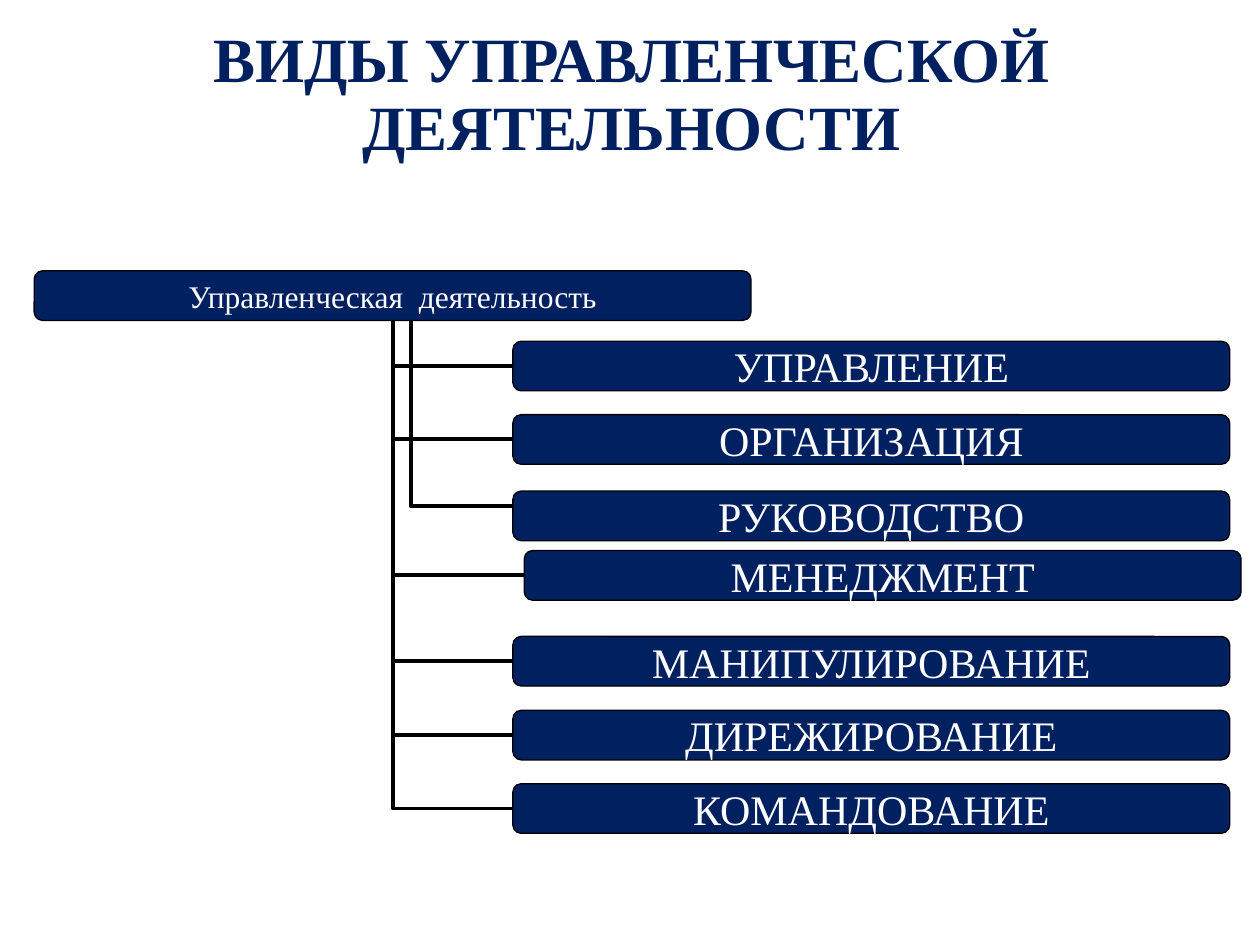
import pptx
import pptx.dml.color
import pptx.enum.shapes
import pptx.enum.text
import pptx.oxml.ns
import pptx.util
import lxml.etree

Cm = pptx.util.Cm
Pt = pptx.util.Pt
NAVY = pptx.dml.color.RGBColor(0x00, 0x20, 0x60)
BLACK = pptx.dml.color.RGBColor(0x00, 0x00, 0x00)
WHITE = pptx.dml.color.RGBColor(0xFF, 0xFF, 0xFF)

BOX_WIDTH, BOX_HEIGHT = 14.45, 1
BRANCH_LEFT = 10.34
ACTIVITIES = [
    ("УПРАВЛЕНИЕ", BRANCH_LEFT, 6.88),
    ("ОРГАНИЗАЦИЯ", BRANCH_LEFT, 8.36),
    ("РУКОВОДСТВО", BRANCH_LEFT, 9.9),
    ("МЕНЕДЖМЕНТ", 10.57, 11.1),
    ("МАНИПУЛИРОВАНИЕ", BRANCH_LEFT, 12.83),
    ("ДИРЕЖИРОВАНИЕ", BRANCH_LEFT, 14.32),
    ("КОМАНДОВАНИЕ", BRANCH_LEFT, 15.8),
]
SEPARATE_BRANCH = "РУКОВОДСТВО"


class SlideBuilder:
    font_name = "Times New Roman"

    def __init__(self, slide):
        self.slide = slide

    def apply(self, target, values):
        for name, value in values.items():
            setattr(target, name, value)

    def label(self, shape, text, size, color, bold=False, line_spacing=None, **frame_format):
        frame = shape.text_frame
        frame.text = text
        self.apply(frame, {
            "vertical_anchor": pptx.enum.text.MSO_ANCHOR.MIDDLE,
            "auto_size": pptx.enum.text.MSO_AUTO_SIZE.NONE,
            **frame_format,
        })
        paragraph = frame.paragraphs[0]
        self.apply(paragraph, {
            "alignment": pptx.enum.text.PP_ALIGN.CENTER,
            "line_spacing": line_spacing,
        })
        font = paragraph.runs[0].font
        self.apply(font, {"name": self.font_name, "size": Pt(size), "bold": bold})
        font.color.rgb = color

    def title(self, text, left, top, width, height):
        shape = self.slide.shapes.title
        self.apply(shape, {
            "left": Cm(left), "top": Cm(top), "width": Cm(width), "height": Cm(height),
        })
        self.label(shape, text, 36, NAVY, bold=True, line_spacing=0.9, word_wrap=True)

    def box(self, text, left, top, size):
        shape = self.slide.shapes.add_shape(
            pptx.enum.shapes.MSO_SHAPE.ROUNDED_RECTANGLE,
            Cm(left), Cm(top), Cm(BOX_WIDTH), Cm(BOX_HEIGHT),
        )
        shape.shadow.inherit = False
        shape.fill.solid()
        shape.fill.fore_color.rgb = NAVY
        shape.line.color.rgb = BLACK
        shape.line.width = Pt(0.75)
        margins = {f"margin_{side}": 0 for side in ("left", "top", "right", "bottom")}
        self.label(shape, text, size, WHITE, word_wrap=False, **margins)
        return shape

    def elbow(self, begin_x, begin_y, end_x, end_y):
        connector = self.slide.shapes.add_connector(
            pptx.enum.shapes.MSO_CONNECTOR.ELBOW, begin_x, begin_y, end_x, end_y
        )
        connector.line.color.rgb = BLACK
        connector.line.width = Pt(2.25)
        properties = connector._element.spPr
        properties.find(pptx.oxml.ns.qn("a:prstGeom")).set("prst", "bentConnector2")
        lxml.etree.SubElement(properties, pptx.oxml.ns.qn("a:effectLst"))
        return connector

    def branch(self, child, parent):
        connector = self.elbow(
            child.left, child.top + child.height // 2,
            parent.left + parent.width // 2, parent.top + parent.height,
        )
        connector.begin_connect(child, 1)
        connector.end_connect(parent, 2)


def main():
    presentation = pptx.Presentation()
    presentation.slide_width = Cm(25.4)
    presentation.slide_height = Cm(19.05)
    builder = SlideBuilder(presentation.slides.add_slide(presentation.slide_layouts[5]))

    builder.title("ВИДЫ УПРАВЛЕНЧЕСКОЙ ДЕЯТЕЛЬНОСТИ", 0.69, 0.53, 24.08, 2.8)
    builder.elbow(Cm(10.69), Cm(10.21), Cm(8.28), Cm(6.27))
    root = builder.box("Управленческая  деятельность", 0.69, 5.46, 18)
    for text, left, top in ACTIVITIES:
        activity = builder.box(text, left, top, 24)
        if text != SEPARATE_BRANCH:
            builder.branch(activity, root)

    presentation.save("out.pptx")


if __name__ == "__main__":
    main()
